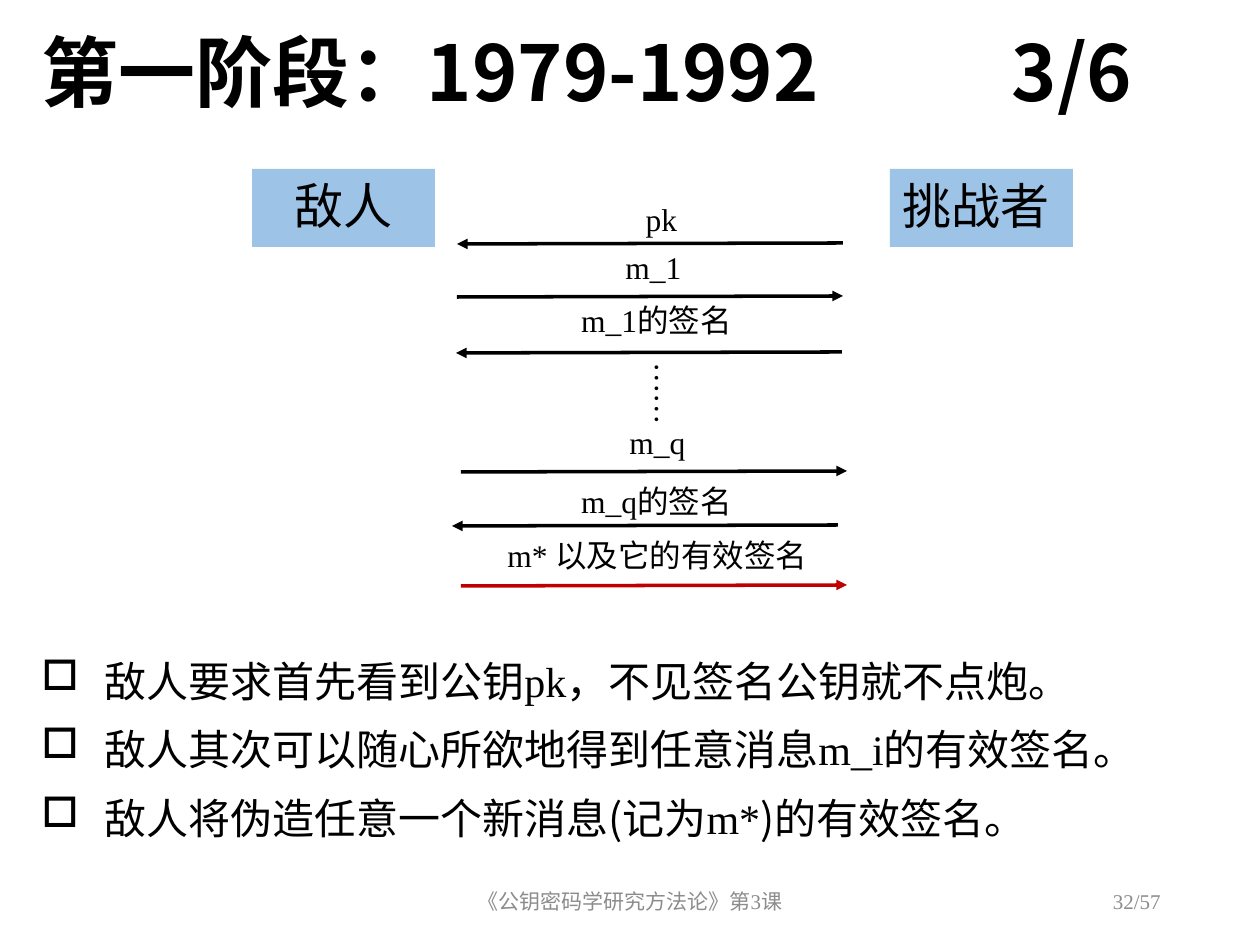
from lxml.etree import SubElement
from pptx import Presentation
from pptx.dml.color import RGBColor
from pptx.enum.shapes import MSO_CONNECTOR, MSO_SHAPE
from pptx.enum.text import MSO_ANCHOR, PP_ALIGN
from pptx.oxml.ns import qn
from pptx.util import Emu, Pt

PX = 914400 // 126
SANS, SERIF = "Noto Sans CJK SC", "Times New Roman"
BLACK, GREY, RED, BLUE = "000000", "8C8C8C", "C00000", "9DC3E6"
LEFT, CENTER, RIGHT = PP_ALIGN.LEFT, PP_ALIGN.CENTER, PP_ALIGN.RIGHT

TITLE = "第一阶段：1979-1992\t3/6"
TITLE_TAB = 970
PARTIES = [("敌人", 252, CENTER), ("挑战者", 890, LEFT)]
# label, label left, label top, label width, arrow left, arrow right-end y, direction, colour
MESSAGES = [
    ("pk", 480, 194, 363, 457, 243, LEFT, BLACK),
    ("m_1", 433, 242, 441, 457, 296, RIGHT, BLACK),
    ("m_1的签名", 475, 295, 363, 456, 352, LEFT, BLACK),
    ("m_q", 437, 417, 441, 461, 471, RIGHT, BLACK),
    ("m_q的签名", 475, 476, 363, 452, 525, LEFT, BLACK),
    ("m* 以及它的有效签名", 437, 530, 441, 461, 585, RIGHT, RED),
]
ARROW_WIDTH, ARROW_DROP = 386, 1
# text before the symbol, symbol, text after it
POINTS = [
    ("敌人要求首先看到公钥", "pk", "，不见签名公钥就不点炮。"),
    ("敌人其次可以随心所欲地得到任意消息", "m_i", "的有效签名。"),
    ("敌人将伪造任意一个新消息(记为", "m*", ")的有效签名。"),
]
FOOTERS = [
    ("《公钥密码学研究方法论》第3课", 417, 426, CENTER),
    ("32/57", 890, 283, RIGHT),
]


def color(value):
    return RGBColor.from_string(value)


def px(*lengths):
    return [Emu(length * PX) for length in lengths]


def style(paragraph, size, face=SERIF, ink=BLACK, align=LEFT):
    paragraph.alignment = align
    font = paragraph.font
    font.size, font.name = Pt(size), face
    font.color.rgb = color(ink)
    if face == SANS:
        SubElement(font._element, qn("a:ea"), typeface=face)


def add_text(page, text, bounds, size, ink=BLACK, align=LEFT):
    box = page.shapes.add_textbox(*px(*bounds))
    frame = box.text_frame
    frame.word_wrap = True
    frame.text = text
    style(frame.paragraphs[0], size, ink=ink, align=align)
    return frame


def add_title(page):
    title = page.shapes.title
    title.left, title.top, title.width, title.height = px(29, 24, 1206, 116)
    frame = title.text_frame
    frame.vertical_anchor = MSO_ANCHOR.MIDDLE
    para = frame.paragraphs[0]
    para.add_run().text = TITLE
    para.line_spacing = 0.7
    tabs = SubElement(para._p.get_or_add_pPr(), qn("a:tabLst"))
    SubElement(tabs, qn("a:tab"), pos=str(TITLE_TAB * PX), algn="l")
    style(para, 44, SANS)
    para.font.bold = True


def add_party(page, name, left, align):
    box = page.shapes.add_shape(MSO_SHAPE.RECTANGLE, *px(left, 169, 183, 78))
    box.shadow.inherit = False
    box.fill.solid()
    box.fill.fore_color.rgb = color(BLUE)
    box.line.fill.background()
    box.text_frame.vertical_anchor = MSO_ANCHOR.TOP
    box.text_frame.text = name
    style(box.text_frame.paragraphs[0], 28, align=align)


def add_arrow(page, left, y, direction, ink):
    ends = [(left, y + ARROW_DROP), (left + ARROW_WIDTH, y)]
    if direction == LEFT:
        ends.reverse()
    arrow = page.shapes.add_connector(MSO_CONNECTOR.STRAIGHT, *px(*ends[0], *ends[1]))
    arrow.line.color.rgb = color(ink)
    arrow.line.width = Pt(0)
    SubElement(arrow.line._get_or_add_ln(), qn("a:tailEnd"), type="triangle")
    SubElement(arrow._element.spPr, qn("a:effectLst"))


def add_points(page):
    frame = page.shapes.add_textbox(*px(29, 649, 1206, 210)).text_frame
    frame.word_wrap = True
    for index, (before, symbol, after) in enumerate(POINTS):
        para = frame.add_paragraph() if index else frame.paragraphs[0]
        properties = para._p.get_or_add_pPr()
        properties.set("marL", str(63 * PX))
        properties.set("indent", str(-63 * PX))
        SubElement(properties, qn("a:buChar"), char="□")
        para.line_spacing = Pt(29)
        if index:
            para.space_before = Pt(10)
        style(para, 24, SANS)
        for text in (before, symbol, after):
            span = para.add_run()
            span.text = text
            if text == symbol:
                span.font.name = SERIF


def main():
    deck = Presentation()
    deck.slide_width, deck.slide_height = px(1260, 945)
    page = deck.slides.add_slide(deck.slide_layouts.get_by_name("Title Only"))
    add_title(page)
    add_points(page)
    for text, left, width, align in FOOTERS:
        frame = add_text(page, text, (left, 876, width, 50), 12, GREY, align)
        frame.vertical_anchor = MSO_ANCHOR.MIDDLE
    for party in PARTIES:
        add_party(page, *party)
    for label, left, top, width, *arrow in MESSAGES:
        add_arrow(page, *arrow)
        add_text(page, label, (left, top, width, 50), 18, align=CENTER)
    dots = add_text(page, "……", (630, 350, 63, 105), 18)
    dots._txBody.bodyPr.set("vert", "eaVert")
    deck.save("out.pptx")


if __name__ == "__main__":
    main()
